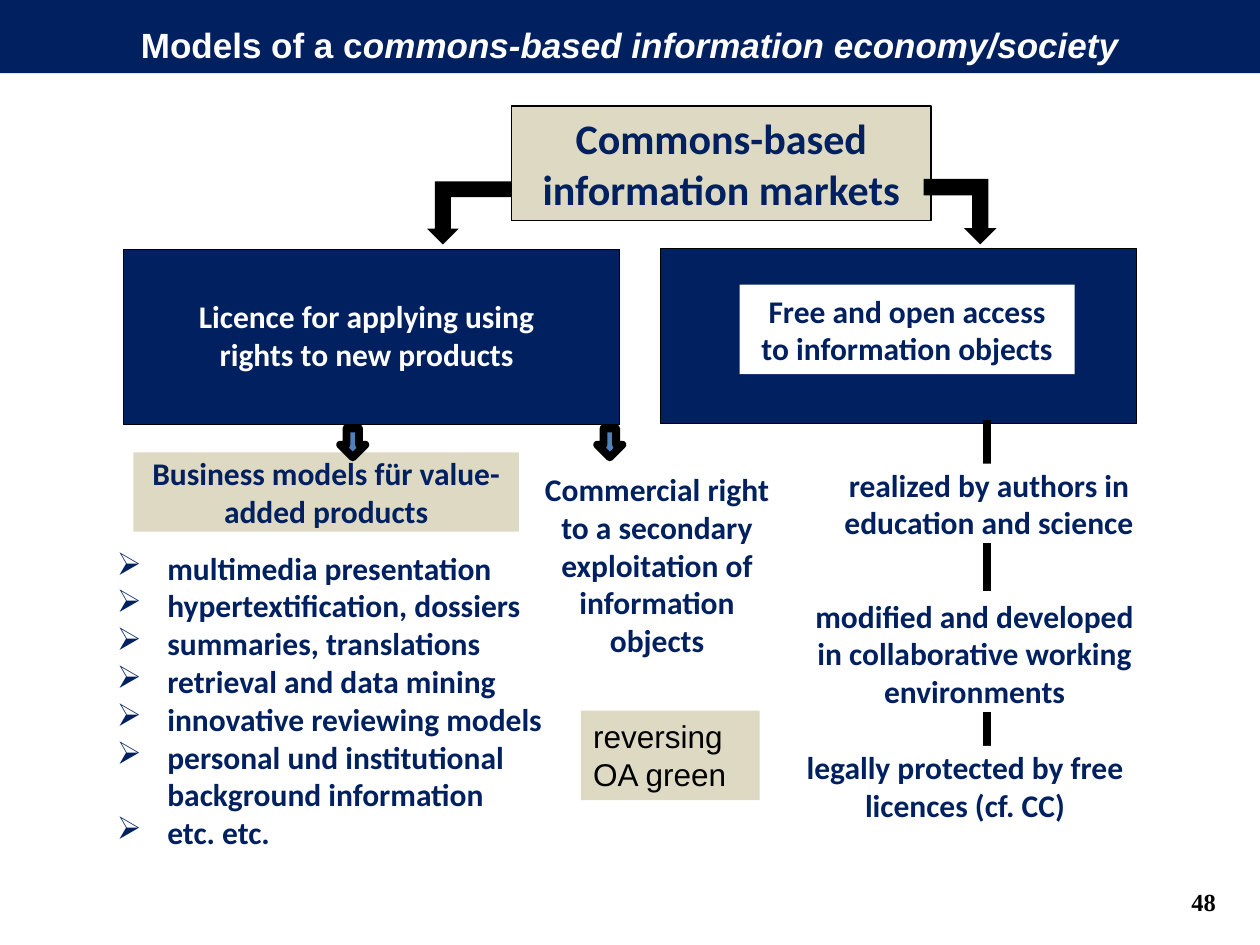
from dataclasses import dataclass
from typing import Optional

from lxml.etree import SubElement
from pptx import Presentation
from pptx.dml.color import RGBColor
from pptx.enum.shapes import MSO_CONNECTOR as Connector, MSO_SHAPE as Shape
from pptx.enum.text import MSO_ANCHOR as Anchor, PP_ALIGN as Align
from pptx.oxml.ns import qn
from pptx.util import Inches, Pt

CELL = Inches(0.1)  # the page is a grid of 100 columns by 75 rows
COLUMNS, ROWS = 100, 75
COLORS = {"navy": "002060", "sand": "DDD9C3", "white": "FFFFFF",
          "black": "000000", "blue": "4F81BD"}
NORMAL, TIGHT, NONE = (1, 0.5), (0.2, 0.1), (0, 0)  # text margins in cells


@dataclass
class Box:
    left: float
    top: float
    width: float
    height: float
    text: str = ""
    fill: Optional[str] = "white"
    color: str = "navy"
    font: str = "Calibri"
    size: float = 18
    bold: bool = True
    align: Align = Align.CENTER
    anchor: Anchor = Anchor.MIDDLE
    margins: tuple[float, float] = NORMAL
    border: float = 0


@dataclass
class Arrow:
    kind: Shape
    left: float
    top: float
    width: float
    height: float
    fill: str = "black"
    border: float = 0
    rotation: float = 0
    flipped: bool = False


def cells(*counts: float) -> list[int]:
    return [round(count * CELL) for count in counts]


def rgb(name: str) -> RGBColor:
    return RGBColor.from_string(COLORS[name])


def add_filled(page, kind: Shape, item):
    shape = page.shapes.add_shape(
        kind, *cells(item.left, item.top, item.width, item.height))
    shape.shadow.inherit = False
    if item.fill:
        shape.fill.solid()
        shape.fill.fore_color.rgb = rgb(item.fill)
    else:
        shape.fill.background()
    if item.border:
        shape.line.color.rgb = rgb("black")
        shape.line.width = Pt(item.border)
    else:
        shape.line.fill.background()
    return shape


def add_box(page, box: Box):
    """Draw a box, with one paragraph for each line of its text."""
    shape = add_filled(page, Shape.RECTANGLE, box)
    frame = shape.text_frame
    frame.word_wrap = True
    frame.vertical_anchor = box.anchor
    side, end = cells(*box.margins)
    frame.margin_left = frame.margin_right = side
    frame.margin_top = frame.margin_bottom = end
    frame.text = box.text
    for para in frame.paragraphs:
        para.alignment = box.align
        para.font.name = box.font
        para.font.size = Pt(box.size)
        para.font.bold = box.bold
        para.font.color.rgb = rgb(box.color)
    return shape


def add_bullets(shape, symbol: str, indent: float) -> None:
    [hang] = cells(indent)
    for para in shape.text_frame.paragraphs:
        props = para._p.get_or_add_pPr()
        props.set("marL", str(hang))
        props.set("indent", str(-hang))
        SubElement(props, qn("a:buChar")).set("char", symbol)


def add_arrow(page, arrow: Arrow) -> None:
    shape = add_filled(page, arrow.kind, arrow)
    shape.rotation = arrow.rotation
    if arrow.flipped:
        shape.element.spPr.get_or_add_xfrm().set("flipV", "1")


def add_link(page, column: float, top: float, bottom: float) -> None:
    link = page.shapes.add_connector(
        Connector.STRAIGHT, *cells(column, top, column, bottom))
    link.line.color.rgb = rgb("black")
    link.line.width = Pt(4.5)
    SubElement(link.element.spPr, qn("a:effectLst"))


def add_title(page) -> None:
    shape = add_box(page, Box(0, -0.3, COLUMNS, 6.1, "Models of a c", "navy",
                              "white", "Arial", 20, anchor=Anchor.TOP))
    para = shape.text_frame.paragraphs[0]
    para.line_spacing = 1.5
    span = para.add_run()
    span.text = "ommons-based information economy/society"
    span.font.italic = True


BRANCHES = [
    Box(52.4, 19.7, 37.8, 13.9, fill="navy", border=0.75),
    Box(58.7, 22.6, 26.6, 7.1, "Free and open access to information objects"),
    Box(9.8, 19.8, 39.4, 13.9, fill="navy", border=0.75),
    Box(12.2, 23, 33.8, 7.1,
        "Licence for applying using rights to new products",
        "navy", "white"),
]
OUTCOMES = [
    Box(10.6, 35.9, 30.6, 6.3, "Business models für value-added products",
        "sand", margins=TIGHT),
    Box(42.5, 37.1, 19.3, 15.4,
        "Commercial right to a secondary exploitation of information objects",
        margins=TIGHT),
    Box(63.8, 59.2, 25.6, 6.3, "legally protected by free licences (cf. CC)",
        margins=TIGHT),
    Box(63.8, 47.2, 27.1, 9.3,
        "modified and developed in collaborative working environments",
        margins=TIGHT),
    Box(65.7, 36.8, 25.6, 6.3, "realized by authors in education and science",
        margins=TIGHT),
    Box(40.6, 8.4, 33.3, 9.1, "Commons-based information markets", "sand",
        size=24, border=1),
    Box(46.1, 56.4, 14.2, 7.1, "reversing OA green", "sand", "black", "Arial",
        bold=False, align=Align.LEFT, anchor=Anchor.TOP),
    Box(91.7, 69, 4.8, 5.2, "48", None, "black", "Times New Roman", 14,
        align=Align.RIGHT, margins=NONE),
]
PRODUCTS = Box(8.3, 42.9, 36.2, 25.3, "\n".join([
    "multimedia presentation",
    "hypertextification, dossiers",
    "summaries, translations",
    "retrieval and data mining",
    "innovative reviewing models",
    "personal und institutional background information",
    "etc. etc.",
]), None, align=Align.LEFT)
ARROWS = [
    Arrow(Shape.BENT_UP_ARROW, 73.3, 14.2, 5.8, 5.2, flipped=True),
    Arrow(Shape.BENT_UP_ARROW, 33.9, 14.4, 6.7, 5, rotation=180),
    *(Arrow(Shape.DOWN_ARROW, left, 34, 2, 2.3, "blue", 4.5)
      for left in (27, 47.4)),
]
LINK_COLUMN = 78.3
LINK_ROWS = [(33.3, 37.5), (42.8, 46.9), (55.4, 59.6)]


def main() -> None:
    deck = Presentation()
    deck.slide_width, deck.slide_height = cells(COLUMNS, ROWS)
    page = deck.slides.add_slide(deck.slide_layouts[6])
    for box in BRANCHES:
        add_box(page, box)
    for top, bottom in LINK_ROWS:
        add_link(page, LINK_COLUMN, top, bottom)
    add_bullets(add_box(page, PRODUCTS), "➢", 4)
    for box in OUTCOMES:
        add_box(page, box)
    for arrow in ARROWS:
        add_arrow(page, arrow)
    add_title(page)
    deck.save("out.pptx")


if __name__ == "__main__":
    main()
